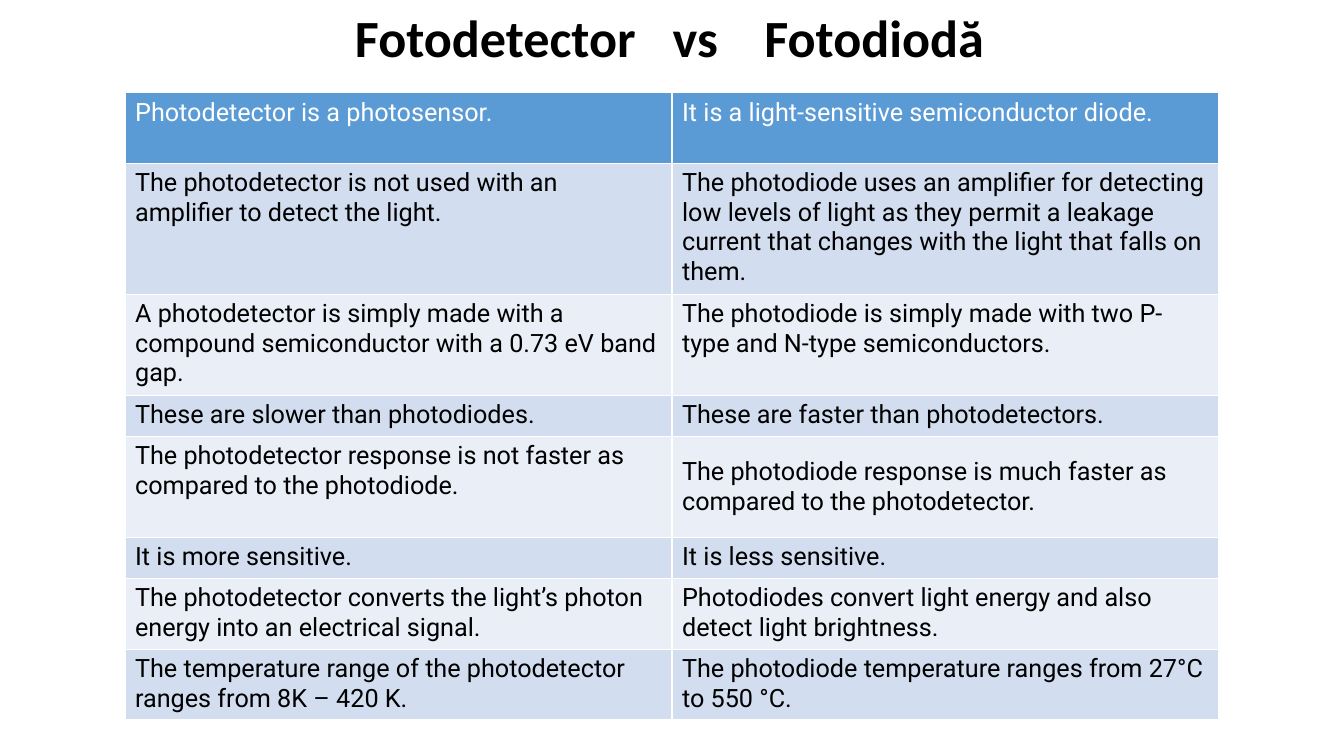
"""Builds a slide that compares photodetectors with photodiodes in a table."""
from lxml import etree
from pptx import Presentation
from pptx.dml.color import RGBColor
from pptx.enum.text import MSO_ANCHOR, MSO_AUTO_SIZE, PP_ALIGN
from pptx.oxml.ns import qn
from pptx.util import Inches, Pt

TOP, MIDDLE = MSO_ANCHOR.TOP, MSO_ANCHOR.MIDDLE
LEFT = PP_ALIGN.LEFT
NO_AUTOFIT = MSO_AUTO_SIZE.NONE

BLACK = RGBColor(0x00, 0x00, 0x00)
WHITE = RGBColor(0xFF, 0xFF, 0xFF)
HEADER_BLUE = RGBColor(0x5B, 0x9B, 0xD5)
BAND_DARK = RGBColor(0xD2, 0xDE, 0xEF)
BAND_LIGHT = RGBColor(0xEA, 0xEF, 0xF7)

TITLE_ONLY = 5
TITLE_WORDS = ["Fotodetector", "vs", "Fotodiodă"]
TITLE_TABS = [3.15, 4.06]

COMPARISON = [
    (0.7, "Photodetector is a photosensor.",
     "It is a light-sensitive semiconductor diode."),
    (1.3, "The photodetector is not used with an amplifier to detect the light.",
     "The photodiode uses an amplifier for detecting low levels of light as they "
     "permit a leakage current that changes with the light that falls on them."),
    (1.0, "A photodetector is simply made with a compound semiconductor with a "
     "0.73 eV band gap.",
     "The photodiode is simply made with two P-type and N-type semiconductors."),
    (0.41, "These are slower than photodiodes.",
     "These are faster than photodetectors."),
    (1.0, "The photodetector response is not faster as compared to the photodiode.",
     "The photodiode response is much faster as compared to the photodetector."),
    (0.41, "It is more sensitive.", "It is less sensitive."),
    (0.7, "The photodetector converts the light’s photon energy into an electrical "
     "signal.",
     "Photodiodes convert light energy and also detect light brightness."),
    (0.7, "The temperature range of the photodetector ranges from 8K – 420 K.",
     "The photodiode temperature ranges from 27°C to 550 °C."),
]
CENTRED_CELL = (4, 1)


def set_font(paragraph, name, size, color, bold=False):
    """Format a whole paragraph."""
    font = paragraph.font
    font.name, font.size, font.bold = name, Pt(size), bold
    font.color.rgb = color


def add_tab_stops(paragraph, positions):
    """Give a paragraph left tab stops at positions in inches."""
    tab_list = etree.SubElement(paragraph._p.get_or_add_pPr(), qn("a:tabLst"))
    for position in positions:
        etree.SubElement(tab_list, qn("a:tab"), pos=str(Inches(position)), algn="l")


def format_title(title):
    """Place the title and space its words with tabs."""
    title.left, title.top = Inches(3.42), Inches(0)
    title.width, title.height = Inches(6.49), Inches(0.73)
    frame = title.text_frame
    frame.text = "\t".join(TITLE_WORDS)
    frame.word_wrap = True
    frame.auto_size = NO_AUTOFIT
    frame.vertical_anchor = MIDDLE
    heading = frame.paragraphs[0]
    heading.alignment = LEFT
    heading.line_spacing = 1.0
    add_tab_stops(heading, TITLE_TABS)
    set_font(heading, "Calibri", 37.3, BLACK, bold=True)


def fill_cell(cell, text, fill, color, anchor):
    """Write and format one table cell."""
    cell.text = text
    cell.fill.solid()
    cell.fill.fore_color.rgb = fill
    cell.vertical_anchor = anchor
    set_font(cell.text_frame.paragraphs[0], "Roboto", 18, color)


def add_comparison(slide):
    """Add the two-column table with its header and banded rows."""
    total_height = sum(height for height, *_ in COMPARISON)
    table = slide.shapes.add_table(
        len(COMPARISON), 2, Inches(1.24), Inches(0.92),
        Inches(10.85), Inches(total_height)).table
    for row, (height, *texts) in enumerate(COMPARISON):
        table.rows[row].height = Inches(height)
        band = BAND_DARK if row % 2 else BAND_LIGHT
        fill, color = (band, BLACK) if row else (HEADER_BLUE, WHITE)
        for column, text in enumerate(texts):
            anchor = MIDDLE if (row, column) == CENTRED_CELL else TOP
            fill_cell(table.cell(row, column), text, fill, color, anchor)


def main():
    """Build and save the slide."""
    presentation = Presentation()
    presentation.slide_width = Inches(13.33)
    presentation.slide_height = Inches(7.5)
    slide = presentation.slides.add_slide(presentation.slide_layouts[TITLE_ONLY])
    format_title(slide.shapes.title)
    add_comparison(slide)
    presentation.save("out.pptx")


if __name__ == "__main__":
    main()
